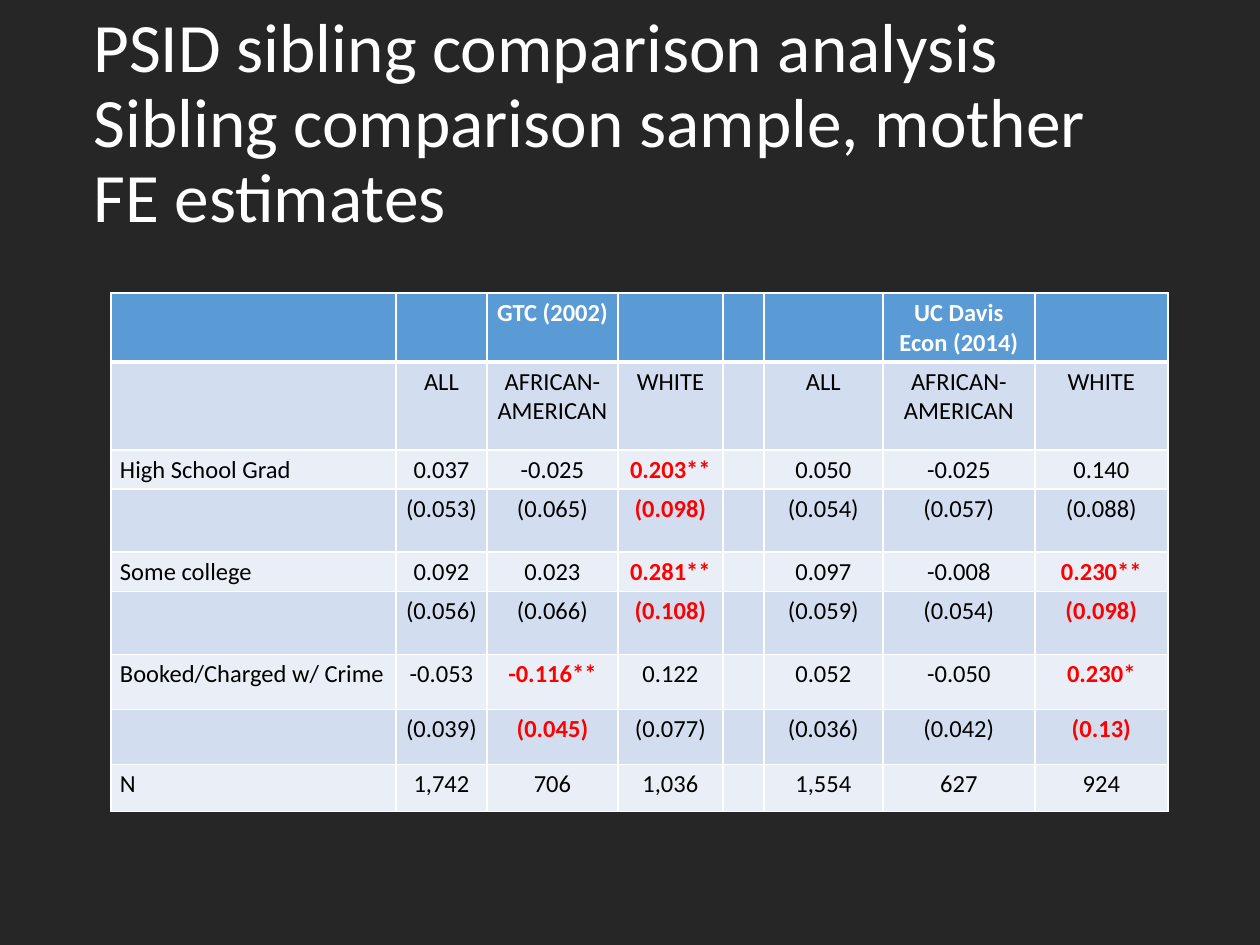
from dataclasses import dataclass

from lxml import etree
from pptx import Presentation
from pptx.dml.color import RGBColor
from pptx.enum.text import MSO_ANCHOR, PP_ALIGN
from pptx.oxml.ns import qn
from pptx.util import Pt

MIDDLE = MSO_ANCHOR.MIDDLE
LEFT, CENTER = PP_ALIGN.LEFT, PP_ALIGN.CENTER
EMU_PER_PX = 914400 / 126


@dataclass(frozen=True)
class Theme:
    font: str = "Calibri"
    title_size: float = 39.6
    table_size: float = 14
    background: str = "262626"
    light: str = "FFFFFF"
    dark: str = "000000"
    significant: str = "FF0000"
    header: str = "5B9BD5"
    bands: tuple = ("EAEFF7", "D2DEEF")
    grid_width: float = 1
    header_rule: float = 3


THEME = Theme()

TITLE_LINES = [
    "PSID sibling comparison analysis",
    "Sibling comparison sample, mother FE estimates",
]
COLUMN_WIDTHS = [285, 91, 131, 105, 41, 119, 152, 133]
ROW_HEIGHTS = [67, 88, 38, 63, 38, 63, 55, 55, 47]
GROUPS = ["ALL", "AFRICAN-AMERICAN", "WHITE"]
ESTIMATES = [
    ["", "", "GTC (2002)", "", "", "", "UC Davis Econ (2014)", ""],
    ["", *GROUPS, "", *GROUPS],
    ["High School Grad", "0.037", "-0.025", "0.203**", "", "0.050", "-0.025", "0.140"],
    ["", "(0.053)", "(0.065)", "(0.098)", "", "(0.054)", "(0.057)", "(0.088)"],
    ["Some college", "0.092", "0.023", "0.281**", "", "0.097", "-0.008", "0.230**"],
    ["", "(0.056)", "(0.066)", "(0.108)", "", "(0.059)", "(0.054)", "(0.098)"],
    ["Booked/Charged w/ Crime", "-0.053", "-0.116**", "0.122", "", "0.052", "-0.050", "0.230*"],
    ["", "(0.039)", "(0.045)", "(0.077)", "", "(0.036)", "(0.042)", "(0.13)"],
    ["N", "1,742", "706", "1,036", "", "1,554", "627", "924"],
]


def px(length):
    return round(length * EMU_PER_PX)


def add_run(paragraph, text, size, color, bold=False):
    run = paragraph.add_run()
    run.text = text
    run.font.name = THEME.font
    run.font.size = Pt(size)
    run.font.bold = bold
    run.font.color.rgb = RGBColor.from_string(color)


def add_title(slide, left, top, width, height):
    frame = slide.shapes.add_textbox(px(left), px(top), px(width), px(height)).text_frame
    frame.word_wrap = True
    frame.vertical_anchor = MIDDLE
    paragraph = frame.paragraphs[0]
    paragraph.line_spacing = 0.9
    for index, line in enumerate(TITLE_LINES):
        if index:
            paragraph.add_line_break()
        add_run(paragraph, line, THEME.title_size, THEME.light)


def set_borders(cell, row):
    top = THEME.header_rule if row == 1 else THEME.grid_width
    bottom = THEME.header_rule if row == 0 else THEME.grid_width
    widths = {"lnL": THEME.grid_width, "lnR": THEME.grid_width, "lnT": top, "lnB": bottom}
    properties = cell._tc.get_or_add_tcPr()
    for side, width in widths.items():
        line = etree.SubElement(properties, qn(f"a:{side}"), w=str(Pt(width)))
        fill = etree.SubElement(line, qn("a:solidFill"))
        etree.SubElement(fill, qn("a:srgbClr"), val=THEME.light)


def is_significant(row, column):
    return any(ESTIMATES[r][column].endswith("*") for r in (row - 1, row))


def text_style(row, column):
    if row == 0:
        return THEME.light, True
    if is_significant(row, column):
        return THEME.significant, True
    return THEME.dark, False


def fill_cell(cell, row, column):
    set_borders(cell, row)
    cell.fill.solid()
    band = THEME.bands[row % 2] if row else THEME.header
    cell.fill.fore_color.rgb = RGBColor.from_string(band)
    cell.margin_left = cell.margin_right = px(9)
    cell.margin_top = cell.margin_bottom = px(5)
    paragraph = cell.text_frame.paragraphs[0]
    paragraph.alignment = CENTER if column else LEFT
    text = ESTIMATES[row][column]
    if text:
        add_run(paragraph, text, THEME.table_size, *text_style(row, column))
    else:
        size = str(round(THEME.table_size * 100))
        etree.SubElement(paragraph._p, qn("a:endParaRPr"), sz=size)


def add_estimates(slide, left, top):
    table = slide.shapes.add_table(
        len(ROW_HEIGHTS), len(COLUMN_WIDTHS),
        px(left), px(top), px(sum(COLUMN_WIDTHS)), px(sum(ROW_HEIGHTS)),
    ).table
    table.horz_banding = False
    for column, width in zip(table.columns, COLUMN_WIDTHS):
        column.width = px(width)
    for row, height in zip(table.rows, ROW_HEIGHTS):
        row.height = px(height)
    for row in range(len(ROW_HEIGHTS)):
        for column in range(len(COLUMN_WIDTHS)):
            fill_cell(table.cell(row, column), row, column)


def main():
    deck = Presentation()
    deck.slide_width, deck.slide_height = px(1260), px(945)
    slide = deck.slides.add_slide(deck.slide_layouts[6])
    slide.background.fill.solid()
    slide.background.fill.fore_color.rgb = RGBColor.from_string(THEME.background)
    add_title(slide, 81, 76, 1086, 98)
    add_estimates(slide, 111, 293)
    deck.save("out.pptx")


if __name__ == "__main__":
    main()
